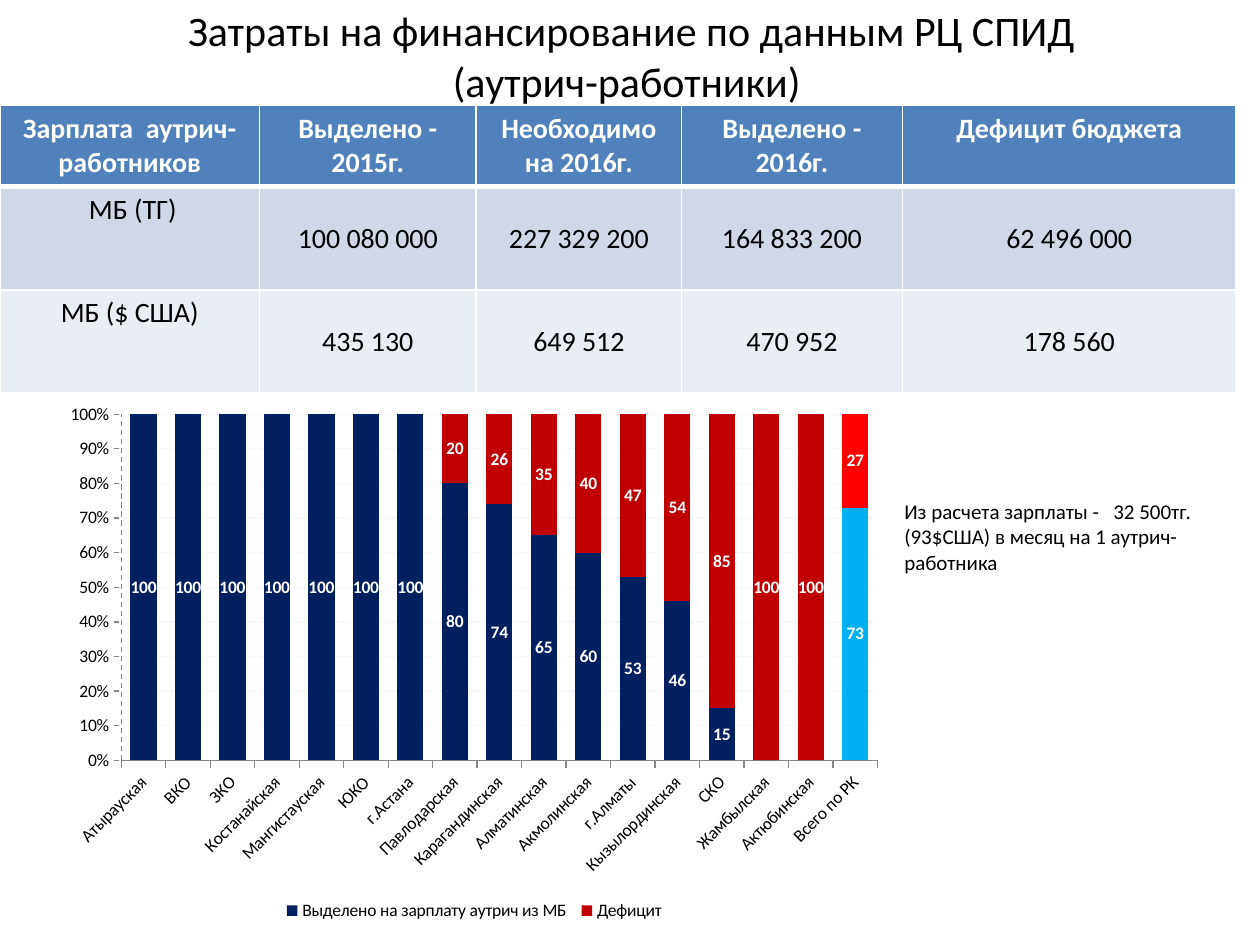
from dataclasses import dataclass

from lxml.etree import SubElement
from pptx import Presentation
from pptx.chart.chart import Chart
from pptx.chart.data import CategoryChartData
from pptx.dml.color import RGBColor
from pptx.enum.chart import XL_CHART_TYPE as ChartType
from pptx.enum.chart import XL_LEGEND_POSITION as LegendPosition
from pptx.enum.chart import XL_TICK_MARK as TickMark
from pptx.enum.dml import MSO_LINE as LineDash
from pptx.enum.text import MSO_ANCHOR as Anchor
from pptx.enum.text import MSO_AUTO_SIZE as AutoSize
from pptx.enum.text import PP_ALIGN as Align
from pptx.oxml import parse_xml
from pptx.oxml.ns import nsdecls, qn
from pptx.util import Cm, Pt

FONT = "Calibri"
BLACK, WHITE, GRAY = "000000", "FFFFFF", "868686"


@dataclass
class TableColumn:
    width: float
    header: str
    tenge: str
    dollars: str


@dataclass
class TableRow:
    height: float
    fill: str
    text_color: str
    bottom_border: int


@dataclass
class ChartSeries:
    name: str
    values: list[int]
    color: str
    total_color: str


COLUMNS = [
    TableColumn(5.23, "Зарплата  аутрич-работников", " МБ (ТГ)", "МБ ($ США)"),
    TableColumn(4.37, "Выделено - 2015г.", "100 080 000", "435 130"),
    TableColumn(4.14, "Необходимо на 2016г.", "227 329 200", "649 512"),
    TableColumn(4.45, "Выделено - 2016г.", "164 833 200", "470 952"),
    TableColumn(6.73, "Дефицит бюджета", "62 496 000", "178 560"),
]
ROWS = [
    TableRow(1.6, "4F81BD", WHITE, 3),
    TableRow(2.08, "D0D8E8", BLACK, 1),
    TableRow(2.08, "E9EDF4", BLACK, 1),
]
REGIONS = [
    "Атырауская", "ВКО", "ЗКО", "Костанайская", "Мангистауская", "ЮКО",
    "г.Астана", "Павлодарская", "Карагандинская", "Алматинская", "Акмолинская",
    "г.Алматы", "Кызылординская", "СКО", "Жамбылская", "Актюбинская", "Всего по РК",
]
FUNDED = [100] * 7 + [80, 74, 65, 60, 53, 46, 15, 0, 0, 73]
SERIES = [
    ChartSeries("Выделено на зарплату аутрич из МБ ", FUNDED, "002060", "00B0F0"),
    ChartSeries("Дефицит", [100 - share for share in FUNDED], "C00000", "FF0000"),
]


def rgb(color: str) -> RGBColor:
    return RGBColor.from_string(color)


def style_font(font, size: int, color: str = BLACK, bold: bool = False) -> None:
    font.name = FONT
    font.size = Pt(size)
    font.bold = bold
    font.color.rgb = rgb(color)


def fill_solid(fill, color: str) -> None:
    fill.solid()
    fill.fore_color.rgb = rgb(color)


def set_borders(cell, bottom_width: int, top_width: int) -> None:
    """Put white borders before the fill, as the schema orders them."""
    properties = cell._tc.get_or_add_tcPr()
    widths = {"lnL": 1, "lnR": 1, "lnT": top_width, "lnB": bottom_width}
    for position, (side, width) in enumerate(widths.items()):
        properties.insert(position, parse_xml(
            f'<a:{side} {nsdecls("a")} w="{Pt(width)}"><a:solidFill>'
            f'<a:srgbClr val="{WHITE}"/></a:solidFill></a:{side}>'))


def add_title(slide) -> None:
    title = slide.shapes.title
    title.left, title.top, title.width, title.height = Cm(1.3), Cm(0.53), Cm(22.86), Cm(1.17)
    frame = title.text_frame
    frame.text = "Затраты на финансирование по данным РЦ СПИД\v(аутрич-работники) "
    frame.auto_size = AutoSize.NONE
    frame.vertical_anchor = Anchor.MIDDLE
    frame.paragraphs[0].alignment = Align.CENTER
    style_font(frame.paragraphs[0].font, 24)


def add_budget_table(slide) -> None:
    width = sum(column.width for column in COLUMNS)
    height = sum(row.height for row in ROWS)
    table = slide.shapes.add_table(
        len(ROWS), len(COLUMNS), Cm(0), Cm(2.13), Cm(width), Cm(height)).table
    for row_index, row in enumerate(ROWS):
        table.rows[row_index].height = Cm(row.height)
        top_border = ROWS[row_index - 1].bottom_border if row_index else 1
        for column_index, column in enumerate(COLUMNS):
            table.columns[column_index].width = Cm(column.width)
            cell = table.cell(row_index, column_index)
            cell.text = (column.header, column.tenge, column.dollars)[row_index]
            fill_solid(cell.fill, row.fill)
            set_borders(cell, row.bottom_border, top_border)
            if row_index and column_index:
                cell.vertical_anchor = Anchor.MIDDLE
                cell.margin_left = cell.margin_right = cell.margin_top = Cm(0.03)
                cell.margin_bottom = Cm(0)
            paragraph = cell.text_frame.paragraphs[0]
            paragraph.alignment = Align.CENTER
            style_font(paragraph.font, 16, row.text_color, bold=row_index == 0)


def add_salary_note(slide) -> None:
    note = slide.shapes.add_textbox(Cm(17.98), Cm(9.93), Cm(7.57), Cm(2.82))
    frame = note.text_frame
    frame.word_wrap = True
    frame.text = "Из расчета зарплаты -   32 500тг. (93$США) в месяц на 1 аутрич-работника"
    style_font(frame.paragraphs[0].font, 12)


def set_plot_layout(chart: Chart, **fractions: float) -> None:
    """Fix the inner plot area as fractions (x, y, w, h) of the chart."""
    plot_area = chart.element.find(".//" + qn("c:plotArea"))
    for old_layout in plot_area.findall(qn("c:layout")):
        plot_area.remove(old_layout)
    layout = parse_xml(f'<c:layout {nsdecls("c")}><c:manualLayout/></c:layout>')
    settings = {"layoutTarget": "inner", "xMode": "edge", "yMode": "edge", **fractions}
    for name, value in settings.items():
        SubElement(layout[0], qn(f"c:{name}"), val=str(value))
    plot_area.insert(0, layout)


def style_axes(chart: Chart) -> None:
    for axis in (chart.category_axis, chart.value_axis):
        axis.major_tick_mark = TickMark.OUTSIDE
        axis.minor_tick_mark = TickMark.NONE
        axis.format.line.color.rgb = rgb(GRAY)
        style_font(axis.tick_labels.font, 10)
    chart.element.xpath(".//c:catAx/c:txPr/a:bodyPr")[0].set("rot", "-2700000")
    value_axis = chart.value_axis
    value_axis.format.line.dash_style = LineDash.DASH
    value_axis.maximum_scale, value_axis.major_unit = 1, 0.1
    value_axis.tick_labels.number_format = "0%"
    value_axis.tick_labels.number_format_is_linked = False
    grid_line = value_axis.major_gridlines.format.line
    grid_line.color.rgb = rgb("F2F2F2")
    grid_line.width = Pt(0.75)
    grid_line.dash_style = LineDash.ROUND_DOT


def add_funding_chart(slide) -> None:
    data = CategoryChartData()
    data.categories = REGIONS
    for item in SERIES:
        data.add_series(item.name, item.values)
    chart = slide.shapes.add_chart(
        ChartType.COLUMN_STACKED_100, Cm(1.09), Cm(7.92), Cm(16.94), Cm(10.74), data).chart
    style_font(chart.font, 10)
    chart.has_title = False
    chart.has_legend = True
    chart.legend.position = LegendPosition.BOTTOM
    chart.legend.include_in_layout = False
    set_plot_layout(chart, x=0.08, y=0.04, w=0.9, h=0.65)
    style_axes(chart)
    plot = chart.plots[0]
    plot.gap_width, plot.overlap, plot.vary_by_categories = 70, 100, False
    for series, item in zip(plot.series, SERIES):
        fill_solid(series.format.fill, item.color)
        fill_solid(series.points[len(REGIONS) - 1].format.fill, item.total_color)
        labels = series.data_labels
        labels.show_value = True
        labels.number_format = "0;;"  # zero values get no label
        labels.number_format_is_linked = False
        style_font(labels.font, 10, WHITE, bold=True)


def main() -> None:
    presentation = Presentation()
    presentation.slide_width, presentation.slide_height = Cm(25.4), Cm(19.05)
    slide = presentation.slides.add_slide(presentation.slide_layouts[5])
    add_title(slide)
    add_budget_table(slide)
    add_salary_note(slide)
    add_funding_chart(slide)
    presentation.save("out.pptx")


if __name__ == "__main__":
    main()
